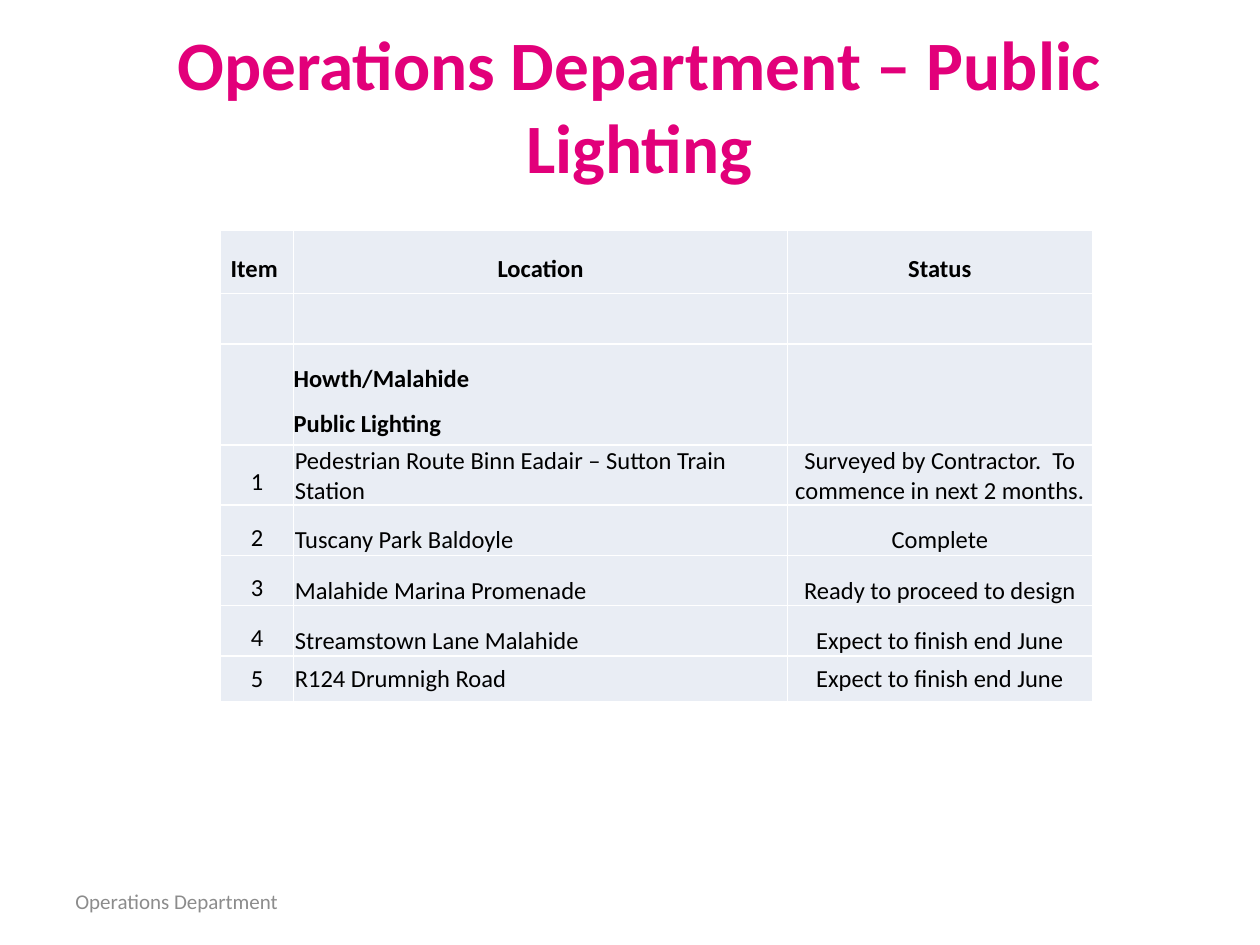
import pptx
import pptx.util
import pptx.dml.color
import pptx.enum.text
import pptx.oxml
import pptx.oxml.ns

Inches = pptx.util.Inches
Pt = pptx.util.Pt
RGBColor = pptx.dml.color.RGBColor
ALIGN = pptx.enum.text.PP_ALIGN
ANCHOR = pptx.enum.text.MSO_ANCHOR

PINK = RGBColor(0xE2, 0x00, 0x7A)
GREY = RGBColor(0x8C, 0x8C, 0x8C)
BLACK = RGBColor(0x00, 0x00, 0x00)
PALE_BLUE = RGBColor(0xE9, 0xED, 0xF4)
WHITE = RGBColor(0xFF, 0xFF, 0xFF)
FONT = "Calibri"

# Content
TITLE = "Operations Department – Public Lighting"
FOOTER = "Operations Department"
HEADINGS = ("Item ", "Location", "Status")
AREA = "Howth/Malahide\nPublic Lighting"
WORKS = [
    ("Pedestrian Route Binn Eadair – Sutton Train Station",
     "Surveyed by Contractor.  To commence in next 2 months."),
    ("Tuscany Park Baldoyle", "Complete"),
    ("Malahide Marina Promenade", "Ready to proceed to design"),
    ("Streamstown Lane Malahide", "Expect to finish end June"),
    ("R124 Drumnigh Road", "Expect to finish end June"),
]
COLUMN_WIDTHS = (0.58, 3.92, 2.42)
ROW_HEIGHTS = (0.5, 0.4, 0.8, 0.4, 0.4, 0.4, 0.4, 0.36)


def write(frame, text, size=14, color=BLACK, bold=False, align=ALIGN.LEFT, spacing=None):
    """Fill a text frame, one paragraph to each line of the text."""
    frame.word_wrap = True
    for index, line in enumerate(text.split("\n")):
        para = frame.add_paragraph() if index else frame.paragraphs[0]
        para.alignment = align
        para.line_spacing = spacing
        span = para.add_run()
        span.text = line
        span.font.name = FONT
        span.font.size = Pt(size)
        span.font.bold = bold
        span.font.color.rgb = color


def add_text(page, place, text, **style):
    box = page.shapes.add_textbox(*[Inches(length) for length in place])
    box.text_frame.vertical_anchor = ANCHOR.MIDDLE
    write(box.text_frame, text, **style)


def write_cell(cell, text, anchor=ANCHOR.MIDDLE, margin=0, **style):
    cell.vertical_anchor = anchor
    cell.margin_left = cell.margin_right = cell.margin_top = Inches(margin)
    cell.margin_bottom = 0
    write(cell.text_frame, text, **style)


def style_cell(cell):
    """Give a cell white 1 pt borders and the pale fill."""
    properties = cell._tc.get_or_add_tcPr()
    for side in ("lnL", "lnR", "lnT", "lnB"):
        properties.append(pptx.oxml.parse_xml(
            f'<a:{side} {pptx.oxml.ns.nsdecls("a")} w="{Pt(1)}"><a:solidFill>'
            f'<a:srgbClr val="{WHITE}"/></a:solidFill></a:{side}>'))
    cell.fill.solid()
    cell.fill.fore_color.rgb = PALE_BLUE


def add_works_table(page):
    table = page.shapes.add_table(
        len(ROW_HEIGHTS), len(COLUMN_WIDTHS), Inches(1.75), Inches(1.83),
        Inches(sum(COLUMN_WIDTHS)), Inches(sum(ROW_HEIGHTS))).table
    table.first_row = table.horz_banding = False
    for column, width in zip(table.columns, COLUMN_WIDTHS):
        column.width = Inches(width)
    for row, height in zip(table.rows, ROW_HEIGHTS):
        row.height = Inches(height)
    for cell in table.iter_cells():
        style_cell(cell)

    # Headings and area name
    for column, heading in enumerate(HEADINGS):
        write_cell(table.cell(0, column), heading, bold=True, align=ALIGN.CENTER, spacing=1.5)
    write_cell(table.cell(2, 1), AREA, bold=True, spacing=1.5)

    # Numbered works; the last row is set tighter and centred vertically
    for number, (location, status) in enumerate(WORKS, start=1):
        row = number + 2
        last = number == len(WORKS)
        anchor = ANCHOR.MIDDLE if last else ANCHOR.BOTTOM
        write_cell(table.cell(row, 0), str(number), align=ALIGN.CENTER,
                   spacing=None if last else 1.5)
        write_cell(table.cell(row, 1), location, anchor=anchor, margin=0.01)
        write_cell(table.cell(row, 2), status, anchor=anchor, margin=0.01, align=ALIGN.CENTER)


def main():
    deck = pptx.Presentation()
    deck.slide_width, deck.slide_height = Inches(10), Inches(7.5)
    page = deck.slides.add_slide(deck.slide_layouts[6])
    add_text(page, (0.5, 6.95, 2.83, 0.4), FOOTER, size=12, color=GREY)
    add_works_table(page)
    add_text(page, (0.57, 0.32, 9.01, 1.02), TITLE, size=39.6, color=PINK, bold=True,
             align=ALIGN.CENTER)
    deck.save("out.pptx")


if __name__ == "__main__":
    main()
